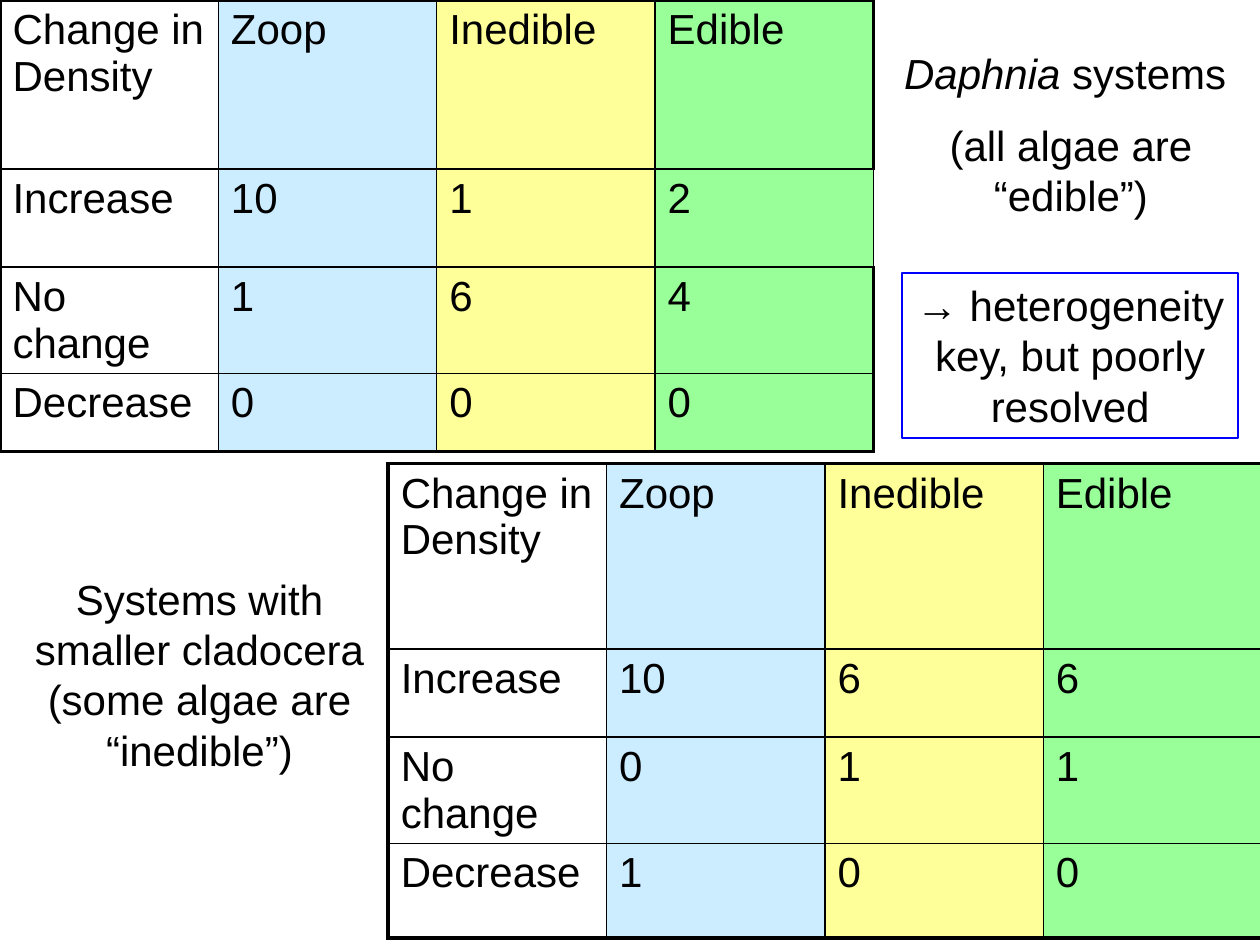
from dataclasses import dataclass

from lxml.etree import SubElement
from pptx import Presentation
from pptx.dml.color import RGBColor
from pptx.enum.shapes import MSO_SHAPE
from pptx.enum.text import MSO_ANCHOR, PP_ALIGN
from pptx.oxml.ns import qn
from pptx.util import Pt

FONT, SIZE = "Arial", 24
BLACK, BLUE = "000000", "0000FF"
COLUMN_FILLS = (None, "CCECFF", "FFFF99", "99FF99")
COLUMN_WIDTH = 124.8
HEADER = ("Change in Density", "Zoop", "Inedible", "Edible")
ROW_LABELS = ("Increase", "No change", "Decrease")
THIN, THICK = 1, 2.25


@dataclass
class DensityTable:
    left: float
    top: float
    height: float
    row_heights: tuple[float, ...]
    counts: tuple[tuple[int, ...], ...]


@dataclass
class Label:
    left: float
    top: float
    width: float
    height: float
    paragraphs: tuple[tuple[tuple[str, bool], ...], ...]
    outline: str | None = None


TABLES = (
    DensityTable(0, 0, 263.5, (96.5, 56.2, 54, 44.6),
                 ((10, 1, 2), (1, 6, 4), (0, 0, 0))),
    DensityTable(221.8, 265, 275, (105.8, 50.4, 54, 54),
                 ((10, 6, 6), (0, 1, 1), (1, 0, 0))),
)
LABELS = (
    Label(504, 23.8, 216, 108.7,
          ((("Daphnia", True), (" systems ", False)),
           (("(all algae are “edible”)", False),))),
    Label(12, 324, 204, 124,
          ((("Systems with smaller cladocera (some algae are “inedible”)", False),),)),
    Label(515.5, 156, 192, 94.3,
          ((("→ heterogeneity key, but poorly resolved", False),),), BLUE),
)


def color(value: str) -> RGBColor:
    return RGBColor.from_string(value)


def style(p) -> None:
    p.font.name = FONT
    p.font.size = Pt(SIZE)
    p.font.color.rgb = color(BLACK)


def set_border(cell, side: str, width: float) -> None:
    ln = SubElement(cell._tc.get_or_add_tcPr(), qn(f"a:ln{side}"), w=str(Pt(width)))
    fill = SubElement(ln, qn("a:solidFill"))
    SubElement(fill, qn("a:srgbClr"), val=BLACK)


def draw_table(s, spec_table: DensityTable) -> None:
    rows = [HEADER] + [(name, *values) for name, values in zip(ROW_LABELS, spec_table.counts)]
    last_row, last_col = len(rows) - 1, len(HEADER) - 1
    frame = s.shapes.add_table(len(rows), len(HEADER), Pt(spec_table.left), Pt(spec_table.top),
                               Pt(COLUMN_WIDTH * len(HEADER)), Pt(spec_table.height))
    table = frame.table
    table.first_row = table.horz_banding = False
    for column in table.columns:
        column.width = Pt(COLUMN_WIDTH)
    for row, height in zip(table.rows, spec_table.row_heights):
        row.height = Pt(height)
    frame.height = Pt(spec_table.height)
    for i, values in enumerate(rows):
        for j, value in enumerate(values):
            cell = table.cell(i, j)
            cell.text = str(value)
            style(cell.text_frame.paragraphs[0])
            outer_right = j == last_col and i != 1
            for side, outer in (("L", j == 0), ("R", outer_right),
                                ("T", i == 0), ("B", i == last_row)):
                set_border(cell, side, THICK if outer else THIN)
            if COLUMN_FILLS[j]:
                cell.fill.solid()
                cell.fill.fore_color.rgb = color(COLUMN_FILLS[j])
            else:
                cell.fill.background()


def draw_label(s, label: Label) -> None:
    box = Pt(label.left), Pt(label.top), Pt(label.width), Pt(label.height)
    if label.outline:
        sp = s.shapes.add_shape(MSO_SHAPE.RECTANGLE, *box)
        sp.shadow.inherit = False
        sp.fill.background()
        sp.line.color.rgb = color(label.outline)
        sp.line.width = Pt(0.75)
    else:
        sp = s.shapes.add_textbox(*box)
    tf = sp.text_frame
    tf.word_wrap = True
    tf.vertical_anchor = MSO_ANCHOR.TOP
    for i, runs in enumerate(label.paragraphs):
        p = tf.paragraphs[0] if i == 0 else tf.add_paragraph()
        p.alignment = PP_ALIGN.CENTER
        p.space_before = Pt(SIZE / 2 if i else 0)
        style(p)
        for text, italic in runs:
            r = p.add_run()
            r.text = text
            if italic:
                r.font.italic = True


def main() -> None:
    prs = Presentation()
    prs.slide_width, prs.slide_height = Pt(720), Pt(540)
    s = prs.slides.add_slide(prs.slide_layouts[6])
    for table in TABLES:
        draw_table(s, table)
    for label in LABELS:
        draw_label(s, label)
    prs.save("out.pptx")


if __name__ == "__main__":
    main()
